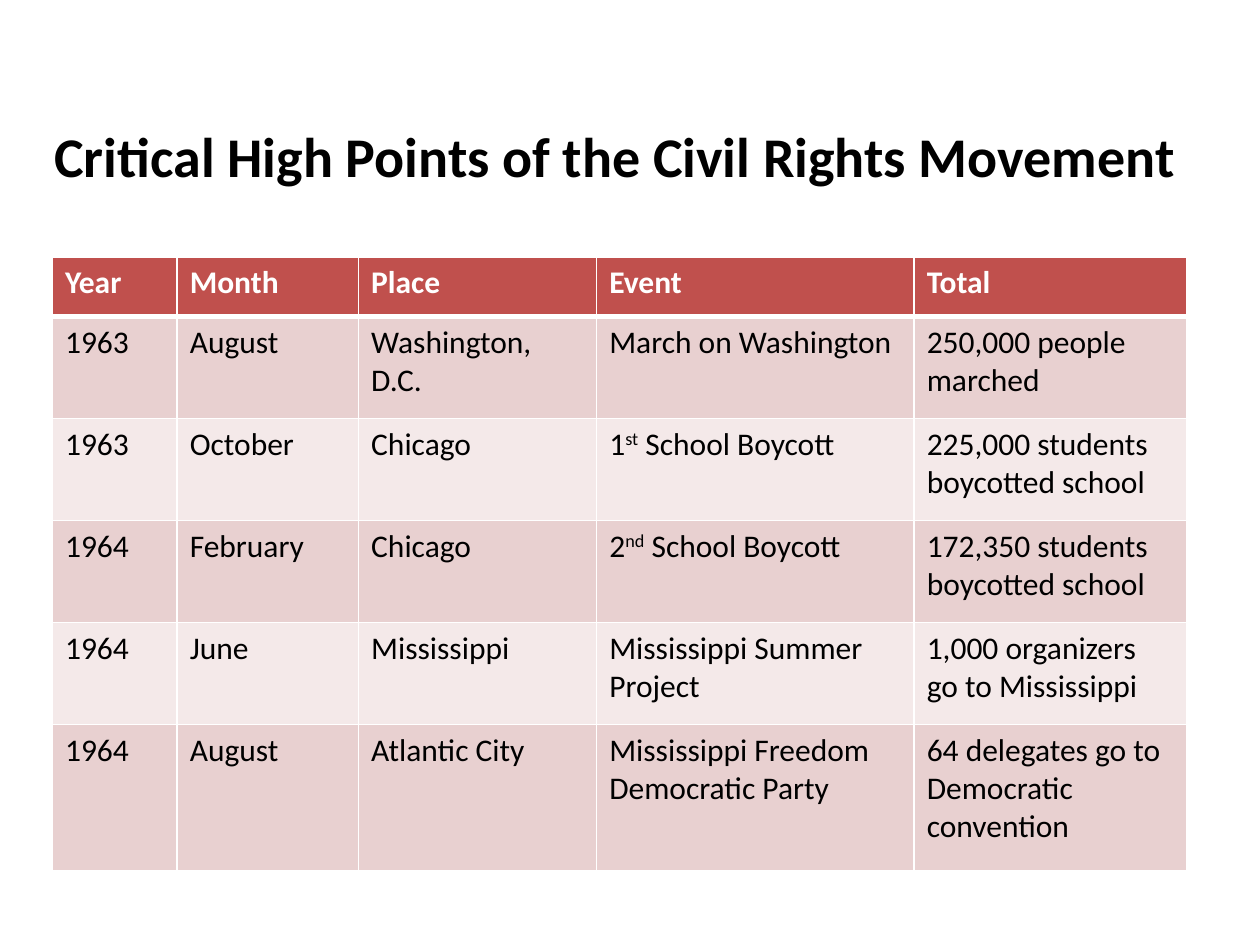
from lxml import etree
from pptx import Presentation
from pptx import util as u
from pptx.dml.color import RGBColor
from pptx.enum import text
from pptx.oxml.ns import qn

HEADER = ["Year", "Month", "Place", "Event", "Total"]
EVENTS = [
    ["1963", "August", "Washington, D.C.", "March on Washington", "250,000 people marched"],
    ["1963", "October", "Chicago", "1^st^ School Boycott", "225,000 students boycotted school"],
    ["1964", "February", "Chicago", "2^nd^ School Boycott", "172,350 students boycotted school"],
    ["1964", "June", "Mississippi", "Mississippi Summer Project", "1,000 organizers go to Mississippi"],
    ["1964", "August", "Atlantic City", "Mississippi Freedom Democratic Party",
     "64 delegates go to Democratic convention"],
]
TABLE_WIDTH = 648
COL_PERCENT = [11, 16, 21, 28, 24]
ROW_HEIGHTS = [34, 58.3, 58.3, 58.3, 58.3, 83.4]


def color(value):
    return RGBColor.from_string(value)


class Deck:
    font = "Calibri"
    white, black, red = "FFFFFF", "000000", "C0504D"
    bands = ["E8D0D0", "F4E9E9"]

    def __init__(self, width, height):
        self.prs = Presentation()
        self.prs.slide_width, self.prs.slide_height = u.Pt(width), u.Pt(height)
        self.s = self.prs.slides.add_slide(self.prs.slide_layouts[6])

    def add_text(self, p, content, size, ink, bold):
        formats = {"name": self.font, "size": u.Pt(size), "bold": bold}
        for i, part in enumerate(content.split("^")):
            r = p.add_run()
            r.text = part
            for key, value in formats.items():
                setattr(r.font, key, value)
            r.font.color.rgb = color(ink)
            if i % 2:
                r._r.get_or_add_rPr().set("baseline", "30000")

    def title(self, content, left, top, width, height):
        sp = self.s.shapes.add_textbox(*map(u.Pt, (left, top, width, height)))
        tf = sp.text_frame
        formats = {"word_wrap": False, "auto_size": text.MSO_AUTO_SIZE.SHAPE_TO_FIT_TEXT}
        for key, value in formats.items():
            setattr(tf, key, value)
        self.add_text(tf.paragraphs[0], content, 32, self.black, True)

    def borders(self, cell, widths):
        tcPr = cell._tc.get_or_add_tcPr()
        for side, width in widths.items():
            ln = etree.SubElement(tcPr, qn("a:ln" + side), w=str(u.Pt(width)))
            fill = etree.SubElement(ln, qn("a:solidFill"))
            etree.SubElement(fill, qn("a:srgbClr"), val=self.white)

    def table(self, rows, left, top, col_widths, row_heights):
        box = (left, top, sum(col_widths), sum(row_heights))
        tbl = self.s.shapes.add_table(len(rows), len(col_widths), *map(u.Pt, box)).table
        for col, width in zip(tbl.columns, col_widths):
            col.width = u.Pt(width)
        for i, (row, height) in enumerate(zip(rows, row_heights)):
            tbl.rows[i].height = u.Pt(height)
            head = i == 0
            fill = self.red if head else self.bands[(i - 1) % 2]
            widths = {"L": 1, "R": 1, "T": 3 if i == 1 else 1, "B": 3 if head else 1}
            for j, content in enumerate(row):
                cell = tbl.cell(i, j)
                self.borders(cell, widths)
                cell.fill.solid()
                cell.fill.fore_color.rgb = color(fill)
                self.add_text(cell.text_frame.paragraphs[0], content, 18,
                              self.white if head else self.black, head)


def main():
    deck = Deck(720, 540)
    col_widths = [TABLE_WIDTH * percent / 100 for percent in COL_PERCENT]
    deck.table([HEADER] + EVENTS, 30, 147, col_widths, ROW_HEIGHTS)
    deck.title("Critical High Points of the Civil Rights Movement", 24, 66, 661.5, 46)
    deck.prs.save("out.pptx")


if __name__ == "__main__":
    main()
